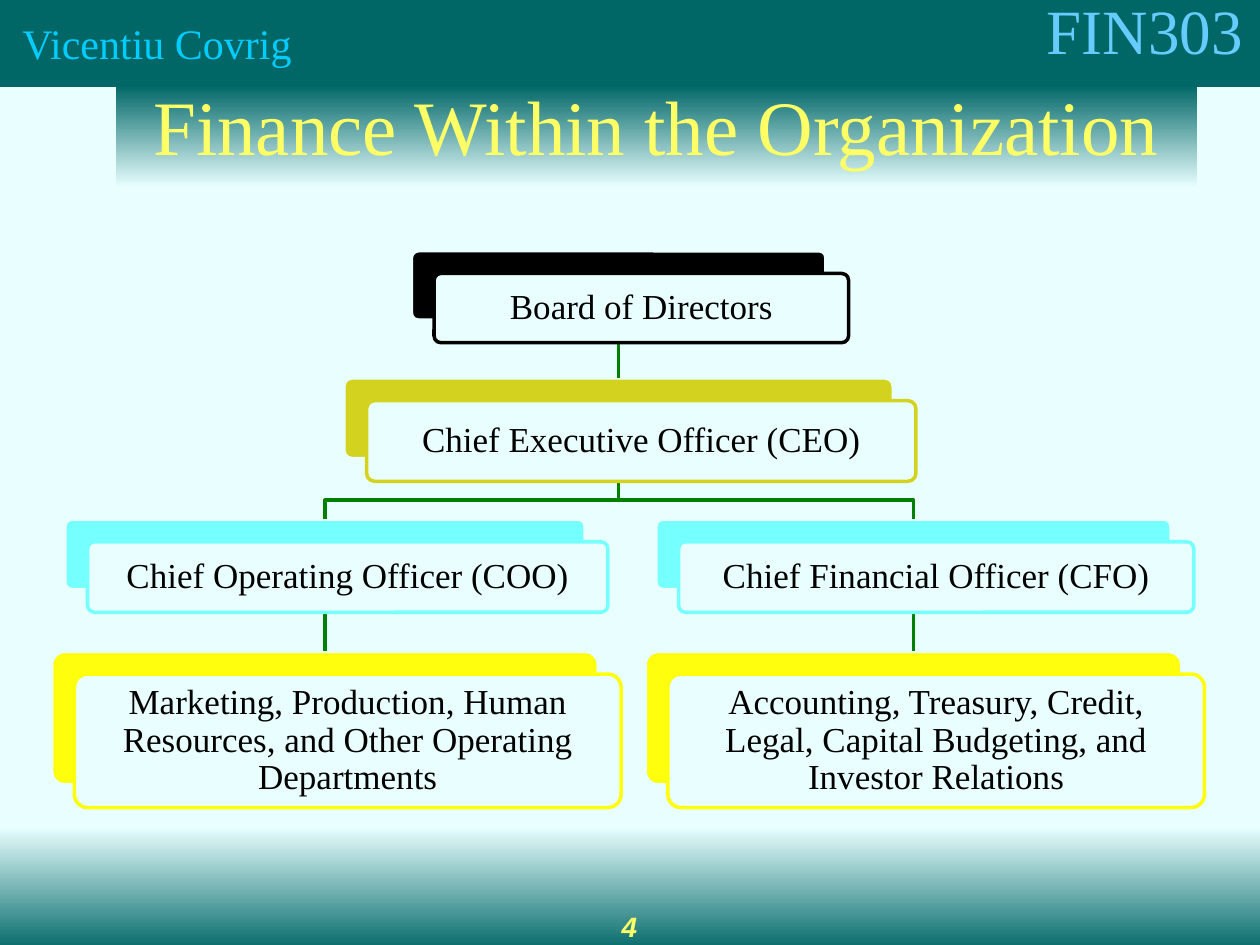
import pptx
import pptx.dml.color
import pptx.enum.shapes
import pptx.enum.text
import pptx.oxml
import pptx.util
from pptx.util import Inches

theme = {
    "pale": "E9FFFF", "teal": "006666", "line": "008000", "text": "000000",
    "heading": "FFFF66", "course": "66CCFF", "author": "00CCFF",
    "board": "000000", "ceo": "D3D31F", "officer": "76FFFF", "department": "FFFF0D",
    "serif": "Times New Roman", "sans": "Arial",
    "title_size": 44, "course_size": 36, "author_size": 24, "box_size": 20, "number_size": 16,
}
SHAPES = pptx.enum.shapes.MSO_SHAPE
ALIGN = pptx.enum.text.PP_ALIGN
ANCHOR = pptx.enum.text.MSO_ANCHOR


def color(name):
    return pptx.dml.color.RGBColor.from_string(theme[name])


def write(shape, text, *, size, ink, font="serif", align=ALIGN.LEFT, spacing=1.0,
          anchor=ANCHOR.TOP, bold=False, italic=False):
    frame = shape.text_frame
    frame.word_wrap = True
    frame.auto_size = pptx.enum.text.MSO_AUTO_SIZE.NONE
    frame.vertical_anchor = anchor
    paragraph = frame.paragraphs[0]
    paragraph.alignment = align
    paragraph.line_spacing = spacing
    run = paragraph.add_run()
    run.text = text
    run.font.name = theme[font]
    run.font.size = pptx.util.Pt(theme[size])
    run.font.color.rgb = color(ink)
    run.font.bold = bold
    run.font.italic = italic


presentation = pptx.Presentation()
presentation.slide_width = Inches(10)
presentation.slide_height = Inches(7.5)
slide = presentation.slides.add_slide(presentation.slide_layouts[5])
slide.background.fill.solid()
slide.background.fill.fore_color.rgb = color("pale")
shapes = slide.shapes

# Title, bottom band and top band
title = shapes.title
title.left, title.top, title.width, title.height = (
    Inches(0.92), Inches(0.67), Inches(8.58), Inches(0.82))
write(title, "Finance Within the Organization", size="title_size", ink="heading",
      align=ALIGN.CENTER, spacing=0.7, anchor=ANCHOR.MIDDLE)
footer = shapes.add_shape(SHAPES.RECTANGLE, Inches(-0.02), Inches(6.56), Inches(10.12), Inches(1))
footer.shadow.inherit = False
footer.line.fill.background()
for band, names in ((title, ("teal", "pale")), (footer, ("pale", "teal"))):
    band.fill.gradient()
    band.fill.gradient_angle = 270
    for stop, position, name in zip(band.fill.gradient_stops, (0, 1), names):
        stop.position = position
        stop.color.rgb = color(name)
header = shapes.add_shape(SHAPES.RECTANGLE, 0, 0, Inches(10.06), Inches(0.69))
header.shadow.inherit = False
header.fill.solid()
header.fill.fore_color.rgb = color("teal")
header.line.fill.background()

# Course, author and slide number
course = shapes.add_textbox(Inches(4.29), Inches(-0.12), Inches(5.67), Inches(0.7))
write(course, "FIN303", size="course_size", ink="course", align=ALIGN.RIGHT)
author = shapes.add_textbox(Inches(0.08), Inches(0.2), Inches(4.08), Inches(0.38))
write(author, "Vicentiu Covrig", size="author_size", ink="author", spacing=0.7)
number = shapes.add_textbox(Inches(3.83), Inches(7.17), Inches(2.33), Inches(0.5))
write(number, "4", size="number_size", ink="heading", font="sans", align=ALIGN.CENTER,
      bold=True, italic=True)

# Organization boxes: key, centre, top, width, height, colour, text
middle, left, right = 4.91, 2.58, 7.25
boxes = [
    ("board", middle, 1.99, 3.29, 0.55, "board", "Board of Directors"),
    ("ceo", middle, 3, 4.36, 0.64, "ceo", "Chief Executive Officer (CEO)"),
    ("coo", left, 4.12, 4.13, 0.56, "officer", "Chief Operating Officer (COO)"),
    ("operations", left, 5.17, 4.34, 1.06, "department",
     "Marketing, Production, Human Resources, and Other Operating Departments"),
    ("cfo", right, 4.12, 4.09, 0.56, "officer", "Chief Financial Officer (CFO)"),
    ("finance", right, 5.17, 4.26, 1.06, "department",
     "Accounting, Treasury, Credit, Legal, Capital Budgeting, and Investor Relations"),
]
offset = 0.18
backs = {}


def add_card(x, y, width, height, fill, outline):
    card = shapes.add_shape(SHAPES.ROUNDED_RECTANGLE, Inches(x), Inches(y),
                            Inches(width), Inches(height))
    card.adjustments[0] = 0.1
    card.shadow.inherit = False
    card.fill.solid()
    card.fill.fore_color.rgb = color(fill)
    card.line.color.rgb = color(outline)
    card.line.width = pptx.util.Pt(2)
    return card


# Back cards
for key, center, top, width, height, tint, text in boxes:
    backs[key] = add_card(center - width / 2, top, width, height, tint, "pale")

# Straight reporting lines
lines = []
for upper, lower in (("board", "ceo"), ("coo", "operations"), ("cfo", "finance")):
    connector = shapes.add_connector(pptx.enum.shapes.MSO_CONNECTOR.STRAIGHT, 0, 0, 0, 0)
    connector.begin_connect(backs[upper], 2)
    connector.end_connect(backs[lower], 0)
    lines.append(connector)

# Branches from the CEO to both officers
for center in (left, right):
    builder = shapes.build_freeform(Inches(middle), Inches(3.63))
    builder.add_line_segments([(Inches(x), Inches(y)) for x, y in
                               ((middle, 3.97), (center, 3.97), (center, 4.12))], close=False)
    branch = builder.convert_to_shape()
    branch.fill.background()
    lines.append(branch)

for line in lines:
    line.line.color.rgb = color("line")
    line.line.width = pptx.util.Pt(2)
    properties = line._element.spPr
    if properties.find(pptx.oxml.ns.qn("a:effectLst")) is None:
        pptx.oxml.xmlchemy.OxmlElement("a:effectLst")
        properties.append(pptx.oxml.xmlchemy.OxmlElement("a:effectLst"))

# Front cards with text
for key, center, top, width, height, tint, text in boxes:
    card = add_card(center - width / 2 + offset, top + offset, width, height, "pale", tint)
    write(card, text, size="box_size", ink="text", align=ALIGN.CENTER, spacing=0.9,
          anchor=ANCHOR.MIDDLE)

presentation.save("out.pptx")
